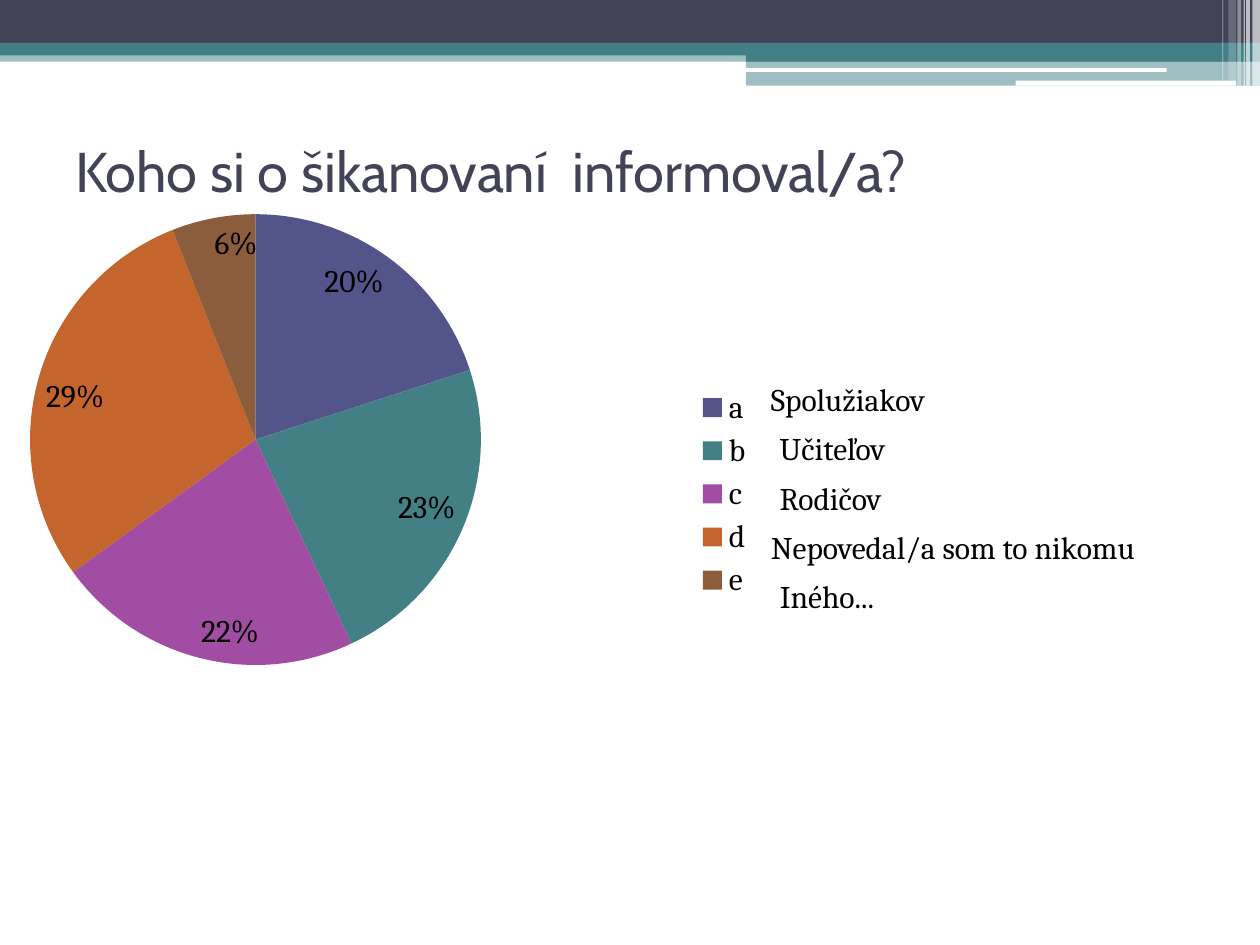
import pptx
import pptx.chart.data
import pptx.dml.color
import pptx.enum.chart
import pptx.enum.shapes
import pptx.enum.text
import pptx.oxml
import pptx.oxml.ns
import pptx.util

Inches = pptx.util.Inches
Pt = pptx.util.Pt
SHAPE = pptx.enum.shapes.MSO_SHAPE
ANCHOR = pptx.enum.text.MSO_ANCHOR

COLORS = {"dark": "424456", "teal": "438086", "white": "FFFFFF", "text": "000000"}
SLICES = [("a", 20, "53548A"), ("b", 23, "438086"), ("c", 22, "A04DA3"),
          ("d", 29, "C4652D"), ("e", 6, "8B5D3D")]
BANDS = [
    (0, 0.4, 10, 0.09, "teal", 50),
    (0, 0, 10, 0.34, "dark", 100),
    (0, 0.34, 10, 0.1, "teal", 100),
    (5.92, 0.39, 4.08, 0.1, "teal", 100),
    (5.92, 0.48, 4.08, 0.2, "teal", 50),
]
ROUNDED = [(5.91, 0.54, 3.35, 0.03), (8.06, 0.64, 1.75, 0.04)]
STRIPES = [(9.94, 0.06, 0.68, 65), (9.89, 0.03, 0.68, 65), (9.87, 0.01, 0.68, 60),
           (9.82, 0.03, 0.68, 40), (9.75, 0.06, 0.64, 20), (9.7, 0.01, 0.64, 30)]
ANSWERS = [("Spolužiakov", 6.02, 1.46), ("Učiteľov", 6.09, 1.06), ("Rodičov", 6.09, 1.04),
           ("Nepovedal/a som to nikomu", 6.02, 3.13), ("Iného...", 6.09, 0.99)]


def rgb(value):
    return pptx.dml.color.RGBColor.from_string(value)


def set_font(font, **values):
    for name, value in values.items():
        setattr(font, name, value)


def add_bar(slide, x, y, w, h, color, alpha=100, kind=SHAPE.RECTANGLE):
    sp = slide.shapes.add_shape(kind, Inches(x), Inches(y), Inches(w), Inches(h))
    sp.shadow.inherit = False
    sp.fill.solid()
    sp.fill.fore_color.rgb = rgb(COLORS[color])
    sp.line.fill.background()
    if alpha < 100:
        clr = sp.fill._xPr.find(".//" + pptx.oxml.ns.qn("a:srgbClr"))
        clr.append(pptx.oxml.parse_xml(
            f'<a:alpha {pptx.oxml.ns.nsdecls("a")} val="{alpha * 1000}"/>'))


def add_text(slide, text, x, y, w, h, font, size, color, wrap=False, anchor=ANCHOR.TOP):
    tf = slide.shapes.add_textbox(Inches(x), Inches(y), Inches(w), Inches(h)).text_frame
    tf.word_wrap = wrap
    tf.vertical_anchor = anchor
    r = tf.paragraphs[0].add_run()
    r.text = text
    set_font(r.font, name=font, size=Pt(size))
    r.font.color.rgb = rgb(COLORS[color])


def set_plot_layout(chart, **values):
    plot_area = chart._chartSpace.chart.plotArea
    for old in plot_area.findall(pptx.oxml.ns.qn("c:layout")):
        plot_area.remove(old)
    parts = {"layoutTarget": "inner", "xMode": "edge", "yMode": "edge", **values}
    body = "".join(f'<c:{name} val="{value}"/>' for name, value in parts.items())
    plot_area.insert(0, pptx.oxml.parse_xml(
        f'<c:layout {pptx.oxml.ns.nsdecls("c")}>'
        f'<c:manualLayout>{body}</c:manualLayout></c:layout>'))


def add_pie(slide, x, y, w, h):
    data = pptx.chart.data.CategoryChartData()
    data.categories = [name for name, _, _ in SLICES]
    data.add_series("Series 1", [value for _, value, _ in SLICES])
    chart = slide.shapes.add_chart(pptx.enum.chart.XL_CHART_TYPE.PIE, Inches(x), Inches(y),
                                   Inches(w), Inches(h), data).chart
    chart.has_title = False
    set_font(chart.font, name="Cambria", size=Pt(18))
    chart.font.color.rgb = rgb(COLORS["text"])
    chart.has_legend = True
    chart.legend.position = pptx.enum.chart.XL_LEGEND_POSITION.RIGHT
    chart.legend.include_in_layout = False
    plot = chart.plots[0]
    plot.vary_by_categories = True
    plot.has_data_labels = True
    labels = {"show_percentage": True, "show_value": False, "number_format": "0%",
              "number_format_is_linked": False,
              "position": pptx.enum.chart.XL_LABEL_POSITION.INSIDE_END}
    for name, value in labels.items():
        setattr(plot.data_labels, name, value)
    for i, (_, _, color) in enumerate(SLICES):
        fill = plot.series[0].points[i].format.fill
        fill.solid()
        fill.fore_color.rgb = rgb(color)
    set_plot_layout(chart, x=0.124, y=0, w=0.537, h=0.806)


def main():
    prs = pptx.Presentation()
    prs.slide_width, prs.slide_height = Inches(10), Inches(7.5)
    slide = prs.slides.add_slide(prs.slide_layouts[6])
    for band in BANDS:
        add_bar(slide, *band)
    for bar in ROUNDED:
        add_bar(slide, *bar, "white", kind=SHAPE.ROUNDED_RECTANGLE)
    for x, w, h, alpha in STRIPES:
        add_bar(slide, x, 0, w, h, "white", alpha)
    add_text(slide, "Koho si o šikanovaní  informoval/a?", 0.5, 0.6, 9, 1.5,
             "Cabin", 32, "dark", wrap=True, anchor=ANCHOR.MIDDLE)
    add_pie(slide, -0.59, 1.7, 6.67, 4.44)
    for i, (answer, x, w) in enumerate(ANSWERS):
        add_text(slide, answer, x, 2.97 + 0.39 * i, w, 0.4, "Cambria", 18, "text")
    prs.save("out.pptx")


if __name__ == "__main__":
    main()
